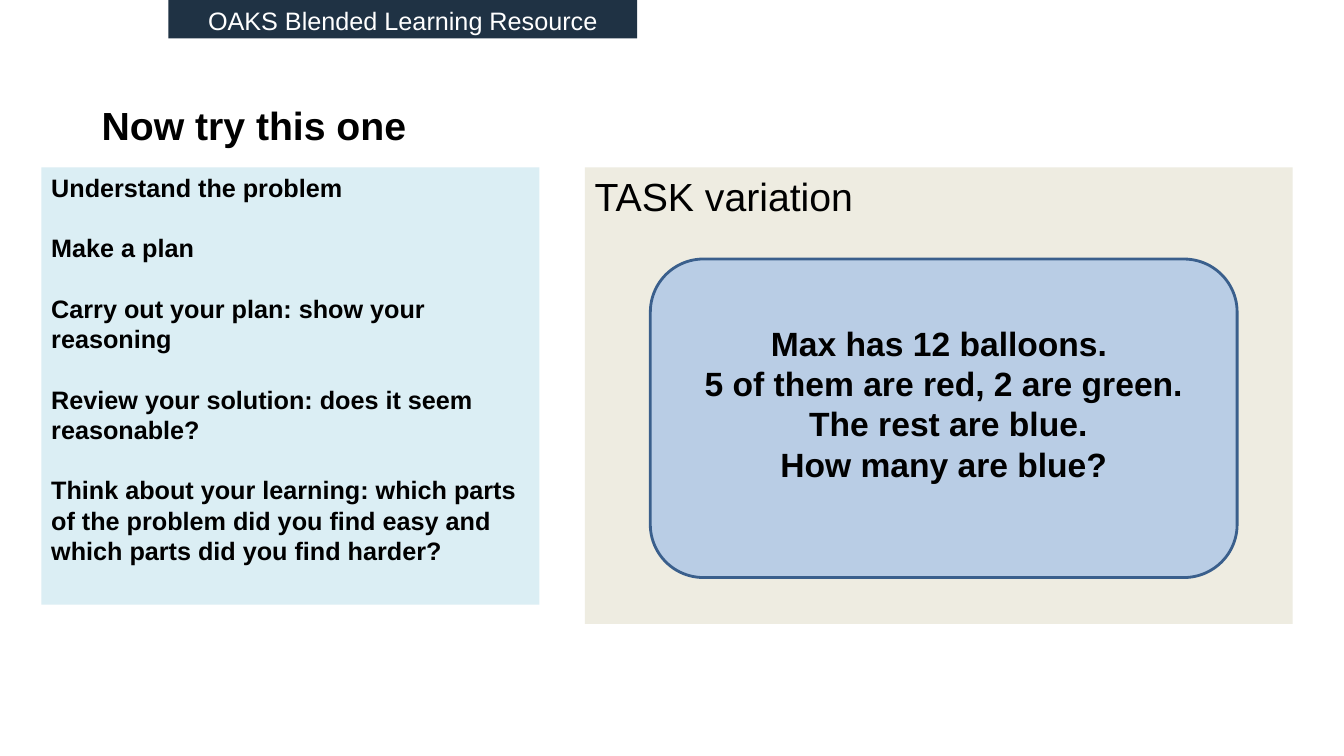
from dataclasses import dataclass

import pptx
import pptx.dml.color
import pptx.enum.shapes
import pptx.enum.text
import pptx.util

Inches = pptx.util.Inches
Pt = pptx.util.Pt
Shape = pptx.enum.shapes.MSO_SHAPE
Anchor = pptx.enum.text.MSO_ANCHOR
Align = pptx.enum.text.PP_ALIGN


@dataclass(frozen=True)
class Theme:
    font: str = "Arial"
    black: str = "000000"
    white: str = "FFFFFF"
    banner: str = "1F3244"
    steps: str = "DBEEF4"
    task: str = "EEECE1"
    problem: str = "B9CDE5"
    problem_line: str = "3A5F8C"
    heading_size: float = 28
    problem_size: float = 24
    body_size: float = 18
    line_width: float = 2
    step_gap: float = 21.6


THEME = Theme()


@dataclass(frozen=True)
class Panel:
    left: float
    top: float
    width: float
    height: float
    lines: tuple[str, ...]
    size: float
    fill: str | None = None
    line: str | None = None
    color: str = THEME.black
    bold: bool = False
    geometry: Shape = Shape.RECTANGLE
    align: Align = Align.LEFT
    anchor: Anchor = Anchor.TOP
    gap: float = 0
    bottom_inset: float = 0.05


PANELS = (
    Panel(0.91, 0.92, 9, 0.64, ("Now try this one",), THEME.heading_size,
          bold=True, anchor=Anchor.MIDDLE),
    Panel(0.41, 1.66, 4.94, 4.34, (
        "Understand the problem",
        "Make a plan",
        "Carry out your plan: show your reasoning",
        "Review your solution: does it seem reasonable?",
        "Think about your learning: which parts of the problem did you find "
        "easy and which parts did you find harder?",
    ), THEME.body_size, THEME.steps, bold=True, gap=THEME.step_gap),
    Panel(1.67, 0, 4.65, 0.38, ("OAKS Blended Learning Resource",),
          THEME.body_size, THEME.banner, color=THEME.white, align=Align.CENTER),
    Panel(5.8, 1.66, 7.02, 4.53, ("TASK variation",), THEME.heading_size, THEME.task),
    Panel(6.45, 2.57, 5.82, 3.16, (
        "Max has 12 balloons. ",
        "5 of them are red, 2 are green.",
        " The rest are blue.",
        "How many are blue?",
    ), THEME.problem_size, THEME.problem, THEME.problem_line, bold=True,
          geometry=Shape.ROUNDED_RECTANGLE, align=Align.CENTER,
          anchor=Anchor.MIDDLE, bottom_inset=0.35),
)


def rgb(value: str) -> pptx.dml.color.RGBColor:
    return pptx.dml.color.RGBColor.from_string(value)


def write_lines(frame: pptx.text.text.TextFrame, panel: Panel) -> None:
    frame.word_wrap = True
    frame.vertical_anchor = panel.anchor
    frame.margin_bottom = Inches(panel.bottom_inset)
    for index, line in enumerate(panel.lines):
        paragraph = frame.add_paragraph() if index else frame.paragraphs[0]
        paragraph.alignment = panel.align
        if index and panel.gap:
            paragraph.space_before = Pt(panel.gap)
        run = paragraph.add_run()
        run.text = line
        run.font.name = THEME.font
        run.font.size = Pt(panel.size)
        run.font.bold = panel.bold
        run.font.color.rgb = rgb(panel.color)


def add_panel(slide: pptx.slide.Slide, panel: Panel) -> None:
    """Draw a filled shape with text, or a plain text box if it has no fill."""
    place = [Inches(value) for value in (panel.left, panel.top, panel.width, panel.height)]
    if panel.fill is None:
        shape = slide.shapes.add_textbox(*place)
    else:
        shape = slide.shapes.add_shape(panel.geometry, *place)
        shape.shadow.inherit = False
        shape.fill.solid()
        shape.fill.fore_color.rgb = rgb(panel.fill)
        if panel.line is None:
            shape.line.fill.background()
        else:
            shape.line.color.rgb = rgb(panel.line)
            shape.line.width = Pt(THEME.line_width)
    write_lines(shape.text_frame, panel)


def main() -> None:
    presentation = pptx.Presentation()
    presentation.slide_width = Inches(13.33)
    presentation.slide_height = Inches(7.5)
    slide = presentation.slides.add_slide(presentation.slide_layouts[6])
    for panel in PANELS:
        add_panel(slide, panel)
    presentation.save("out.pptx")


if __name__ == "__main__":
    main()
